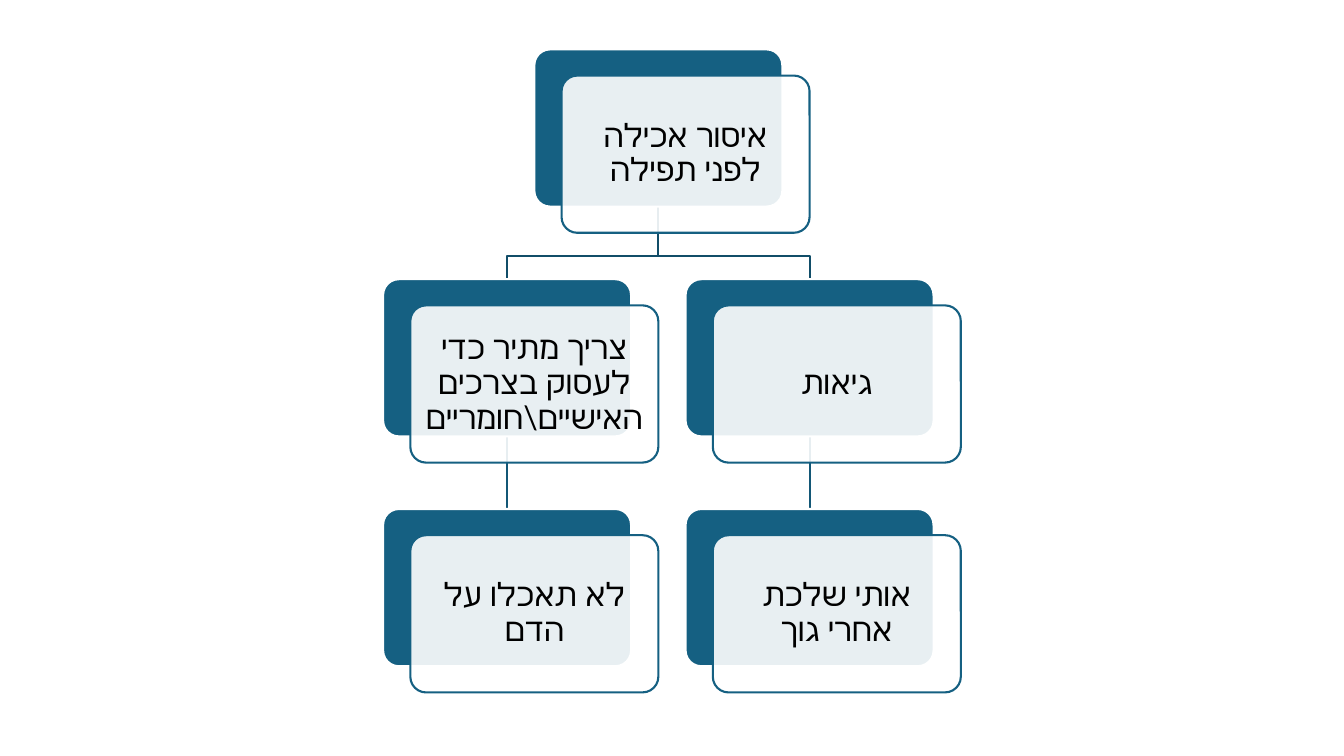
from lxml.etree import SubElement
from pptx import Presentation
from pptx.dml.color import RGBColor
from pptx.enum.shapes import MSO_CONNECTOR, MSO_SHAPE
from pptx.enum.text import MSO_ANCHOR, PP_ALIGN
from pptx.oxml.ns import qn
from pptx.util import Inches, Pt

FONT = "Lato"
NODES = {
    "ban": ("איסור אכילה לפני תפילה", 0.5, 0),
    "pride": ("גיאות", 1, 1),
    "behind": ("אותי שלכת אחרי גוך", 1, 2),
    "permit": ("צריך מתיר כדי לעסוק בצרכים האישיים\\חומריים", 0, 1),
    "blood": ("לא תאכלו על הדם", 0, 2),
}
BRANCHES = [("ban", "pride"), ("ban", "permit")]
STEMS = [("pride", "behind"), ("permit", "blood")]

LEFT, TOP = 3.8, 0.49
COL_STEP, ROW_STEP = 3.0, 2.28
CARD_W, CARD_H = 2.46, 1.56
OFFSET_X, OFFSET_Y = 0.27, 0.26
BEND = 0.49

prs = Presentation()
prs.slide_width, prs.slide_height = Inches(13.33), Inches(7.5)
s = prs.slides.add_slide(prs.slide_layouts[6])
tree = s.shapes._spTree


def rgb(value):
    return RGBColor.from_string(value)


def style_line(sp, color):
    sp.line.color.rgb = rgb(color)
    sp.line.width = Pt(1.5)


def add_card(x, y, fill, line):
    sp = s.shapes.add_shape(MSO_SHAPE.ROUNDED_RECTANGLE, Inches(x), Inches(y),
                            Inches(CARD_W), Inches(CARD_H))
    sp.adjustments[0] = 0.1
    sp.shadow.inherit = False
    sp.fill.solid()
    sp.fill.fore_color.rgb = rgb(fill)
    style_line(sp, line)
    return sp


def add_label(sp, text):
    tf = sp.text_frame
    tf.word_wrap = True
    tf.vertical_anchor = MSO_ANCHOR.MIDDLE
    tf.margin_left = tf.margin_right = tf.margin_top = tf.margin_bottom = Inches(0.1)
    p = tf.paragraphs[0]
    p.alignment = PP_ALIGN.CENTER
    p.line_spacing = 0.9
    p._p.get_or_add_pPr().set("rtl", "1")
    r = p.add_run()
    r.text = text
    r.font.size = Pt(23)
    r.font.name = FONT
    r.font.color.rgb = rgb("000000")
    SubElement(r._r.get_or_add_rPr(), qn("a:cs")).set("typeface", FONT)


def add_node(text, col, row):
    x, y = LEFT + col * COL_STEP, TOP + row * ROW_STEP
    back = add_card(x, y, "156082", "FFFFFF")
    front = add_card(x + OFFSET_X, y + OFFSET_Y, "FFFFFF", "156082")
    color = front.fill._xPr.find(qn("a:solidFill"))[0]
    SubElement(color, qn("a:alpha")).set("val", "90000")
    add_label(front, text)
    return back


def add_branch(parent, child):
    x1, y1 = parent.left + parent.width // 2, parent.top + parent.height
    x2, y2 = child.left + child.width // 2, child.top
    bend = y1 + Inches(BEND)
    path_builder = s.shapes.build_freeform(x1, y1)
    path_builder.add_line_segments([(x1, bend), (x2, bend), (x2, y2)], close=False)
    sp = path_builder.convert_to_shape()
    sp.fill.background()
    sp.shadow.inherit = False
    style_line(sp, "114D68")
    tree.insert(2, sp._element)


def add_stem(parent, child):
    c = s.shapes.add_connector(MSO_CONNECTOR.STRAIGHT, 0, 0, 0, 0)
    c.begin_connect(parent, 2)
    c.end_connect(child, 0)
    style_line(c, "135776")
    SubElement(c._element.spPr, qn("a:effectLst"))
    tree.insert(2, c._element)


cards = {name: add_node(*node) for name, node in NODES.items()}
for parent, child in BRANCHES:
    add_branch(cards[parent], cards[child])
for parent, child in STEMS:
    add_stem(cards[parent], cards[child])

prs.save("out.pptx")
